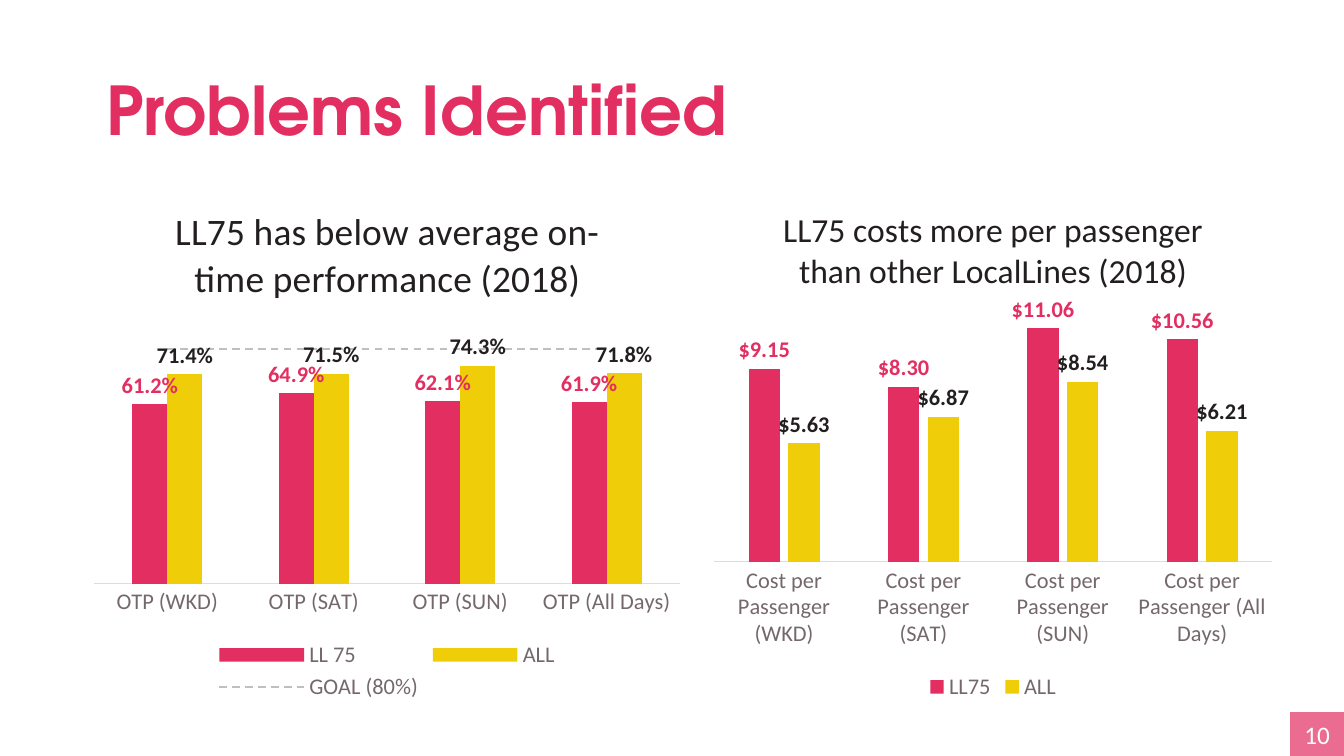
from dataclasses import dataclass

from lxml.etree import SubElement
from pptx import Presentation
from pptx.chart.data import CategoryChartData
from pptx.dml.color import RGBColor
from pptx.enum.chart import XL_CHART_TYPE as ChartKind, XL_LABEL_POSITION as LabelPos
from pptx.enum.chart import XL_LEGEND_POSITION as LegendPos, XL_MARKER_STYLE as Marker
from pptx.enum.chart import XL_TICK_LABEL_POSITION as TickLabel, XL_TICK_MARK as Tick
from pptx.enum.dml import MSO_LINE as Dash
from pptx.enum.shapes import MSO_SHAPE as Preset
from pptx.enum.text import MSO_ANCHOR as Anchor, PP_ALIGN as Align
from pptx.oxml import parse_xml
from pptx.oxml.ns import nsdecls, qn
from pptx.util import Inches, Pt


@dataclass(frozen=True)
class Theme:
    pink: str = "E22E61"
    yellow: str = "EFCE09"
    ink: str = "231F20"
    muted: str = "75686B"
    rule: str = "E0DCDD"
    goal: str = "BFBFBF"
    white: str = "FFFFFF"
    heading: str = "TeX Gyre Adventor"
    body: str = "Calibri"
    heading_size: float = 36
    chart_size: float = 12
    number_size: float = 13.5
    opacity: int = 70


theme = Theme()
HEADING = "Problems Identified"
PAGE_NUMBER = "10"
DAYS = ["WKD", "SAT", "SUN", "All Days"]

CHARTS = [
    {
        "title": "LL75 has below average on-time performance (2018)",
        "title_size": 20,
        "title_at": (14.2, 2.2),
        "measure": "OTP",
        "bars": [("LL 75", [0.612, 0.649, 0.621, 0.619]),
                 ("ALL", [0.714, 0.715, 0.743, 0.718])],
        "goal": ("GOAL (80%)", [0.8] * len(DAYS)),
        "number_format": "0.0%",
        "maximum": 0.9,
        "overlap": 0,
        "columns": (6.1, 45.4),
        "plot": (2, 25.6, 96, 50.9),
    },
    {
        "title": "LL75 costs more per passenger than other LocalLines (2018)",
        "title_size": 18,
        "title_at": (12.8, 2.6),
        "measure": "Cost per Passenger",
        "bars": [("LL75", [9.15, 8.3, 11.06, 10.56]),
                 ("ALL", [5.63, 6.87, 8.54, 6.21])],
        "goal": None,
        "number_format": '"$"#,##0.00',
        "maximum": 12,
        "overlap": -27,
        "columns": (52.3, 43.2),
        "plot": (2, 23.5, 96, 48.8),
    },
]
CHART_ROWS = (24.71, 68.62)
BAR_COLORS = [(theme.pink, theme.pink), (theme.yellow, theme.ink)]

deck = Presentation()
deck.slide_width = Inches(10)
deck.slide_height = deck.slide_width * 9 // 16


def share(columns, rows):
    (left, width), (top, height) = columns, rows
    return [int(deck.slide_width * left / 100), int(deck.slide_height * top / 100),
            int(deck.slide_width * width / 100), int(deck.slide_height * height / 100)]


def apply(target, values):
    for name, value in values.items():
        setattr(target, name, value)


def style(font, size, color, face=theme.body, bold=False):
    apply(font, {"size": Pt(size), "name": face, "bold": bold})
    font.color.rgb = RGBColor.from_string(color)


def paint(fill, color, opacity=None):
    fill.solid()
    fill.fore_color.rgb = RGBColor.from_string(color)
    if opacity:
        tint = fill._xPr.find(".//" + qn("a:srgbClr"))
        SubElement(tint, qn("a:alpha"), val=str(opacity * 1000))


def layout(parent, position, inner=False):
    for old in parent.findall(qn("c:layout")):
        parent.remove(old)
    target = '<c:layoutTarget val="inner"/>' if inner else ""
    keys = "xywh"[:len(position)]
    modes = "".join(f'<c:{key}Mode val="edge"/>' for key in keys[:2])
    values = "".join(f'<c:{key} val="{value / 100}"/>' for key, value in zip(keys, position))
    return parse_xml(f'<c:layout {nsdecls("c")}><c:manualLayout>{target}{modes}{values}'
                     '</c:manualLayout></c:layout>')


def draw_goal(chart):
    bars = chart.plots[0]._element
    goal = bars.findall(qn("c:ser"))[-1]
    for extra in goal.findall(qn("c:invertIfNegative")):
        goal.remove(extra)
    lines = parse_xml(f'<c:lineChart {nsdecls("c")}><c:grouping val="standard"/>'
                      '<c:varyColors val="0"/><c:marker val="1"/></c:lineChart>')
    lines.insert(2, goal)
    for axis in bars.findall(qn("c:axId")):
        SubElement(lines, qn("c:axId"), val=axis.get("val"))
    bars.addnext(lines)
    series = chart.plots[1].series[0]
    series.smooth = False
    series.marker.style = Marker.NONE
    apply(series.format.line, {"width": Pt(1), "dash_style": Dash.DASH})
    series.format.line.color.rgb = RGBColor.from_string(theme.goal)


def add_column_chart(slide, content):
    data = CategoryChartData(number_format=content["number_format"])
    data.categories = [f"{content['measure']} ({day})" for day in DAYS]
    goal = [content["goal"]] if content["goal"] else []
    for name, values in content["bars"] + goal:
        data.add_series(name, values)
    chart = slide.shapes.add_chart(
        ChartKind.COLUMN_CLUSTERED, *share(content["columns"], CHART_ROWS), data).chart
    style(chart.font, theme.chart_size, theme.ink)

    caption = chart.chart_title.text_frame
    caption.text = content["title"]
    style(caption.paragraphs[0].runs[0].font, content["title_size"], theme.ink)
    chart.chart_title.include_in_layout = False
    caption_xml = chart.chart_title._element
    place = layout(caption_xml, content["title_at"])
    caption_xml.find(qn("c:tx")).addnext(place)
    plot_area = chart._chartSpace.chart.plotArea
    plot_area.insert(0, layout(plot_area, content["plot"], inner=True))

    columns = chart.plots[0]
    apply(columns, {"gap_width": 219, "overlap": content["overlap"],
                    "vary_by_categories": False})
    if goal:
        draw_goal(chart)
    for series, (color, label_color) in zip(columns.series, BAR_COLORS):
        paint(series.format.fill, color)
        labels = series.data_labels
        apply(labels, {"show_value": True, "position": LabelPos.OUTSIDE_END,
                       "number_format": content["number_format"],
                       "number_format_is_linked": False})
        style(labels.font, theme.chart_size, label_color, bold=True)

    days = chart.category_axis
    apply(days, {"major_tick_mark": Tick.NONE, "minor_tick_mark": Tick.NONE,
                 "tick_label_position": TickLabel.NEXT_TO_AXIS,
                 "has_major_gridlines": False})
    style(days.tick_labels.font, theme.chart_size, theme.muted)
    days.format.line.width = Pt(0.75)
    days.format.line.color.rgb = RGBColor.from_string(theme.rule)
    apply(chart.value_axis, {"visible": False, "has_major_gridlines": False,
                             "major_tick_mark": Tick.NONE, "minor_tick_mark": Tick.NONE,
                             "minimum_scale": 0, "maximum_scale": content["maximum"]})
    chart.has_legend = True
    apply(chart.legend, {"position": LegendPos.BOTTOM, "include_in_layout": False})
    style(chart.legend.font, theme.chart_size, theme.muted)


def add_heading(slide):
    heading = slide.shapes.title
    apply(heading, dict(zip(("left", "top", "width", "height"),
                            share((6.9, 86.2), (5.33, 19.38)))))
    paint(heading.fill, theme.white, theme.opacity)
    frame = heading.text_frame
    frame.text = HEADING
    apply(frame, {"vertical_anchor": Anchor.MIDDLE, "word_wrap": True} | {
        f"margin_{side}": Inches(0.1) for side in ("left", "top", "right", "bottom")})
    line = frame.paragraphs[0]
    apply(line, {"alignment": Align.LEFT, "line_spacing": 0.9})
    style(line.runs[0].font, theme.heading_size, theme.pink, theme.heading, True)


def add_page_number(slide):
    badge = slide.shapes.add_shape(Preset.RECTANGLE, *share((96, 4), (94.2, 5.8)))
    badge.shadow.inherit = False
    badge.line.fill.background()
    paint(badge.fill, theme.pink, theme.opacity)
    badge.text_frame.text = PAGE_NUMBER
    badge.text_frame.vertical_anchor = Anchor.MIDDLE
    line = badge.text_frame.paragraphs[0]
    line.alignment = Align.CENTER
    style(line.runs[0].font, theme.number_size, theme.white)


slide = deck.slides.add_slide(deck.slide_layouts.get_by_name("Title Only"))
add_heading(slide)
for content in CHARTS:
    add_column_chart(slide, content)
add_page_number(slide)
deck.save("out.pptx")
